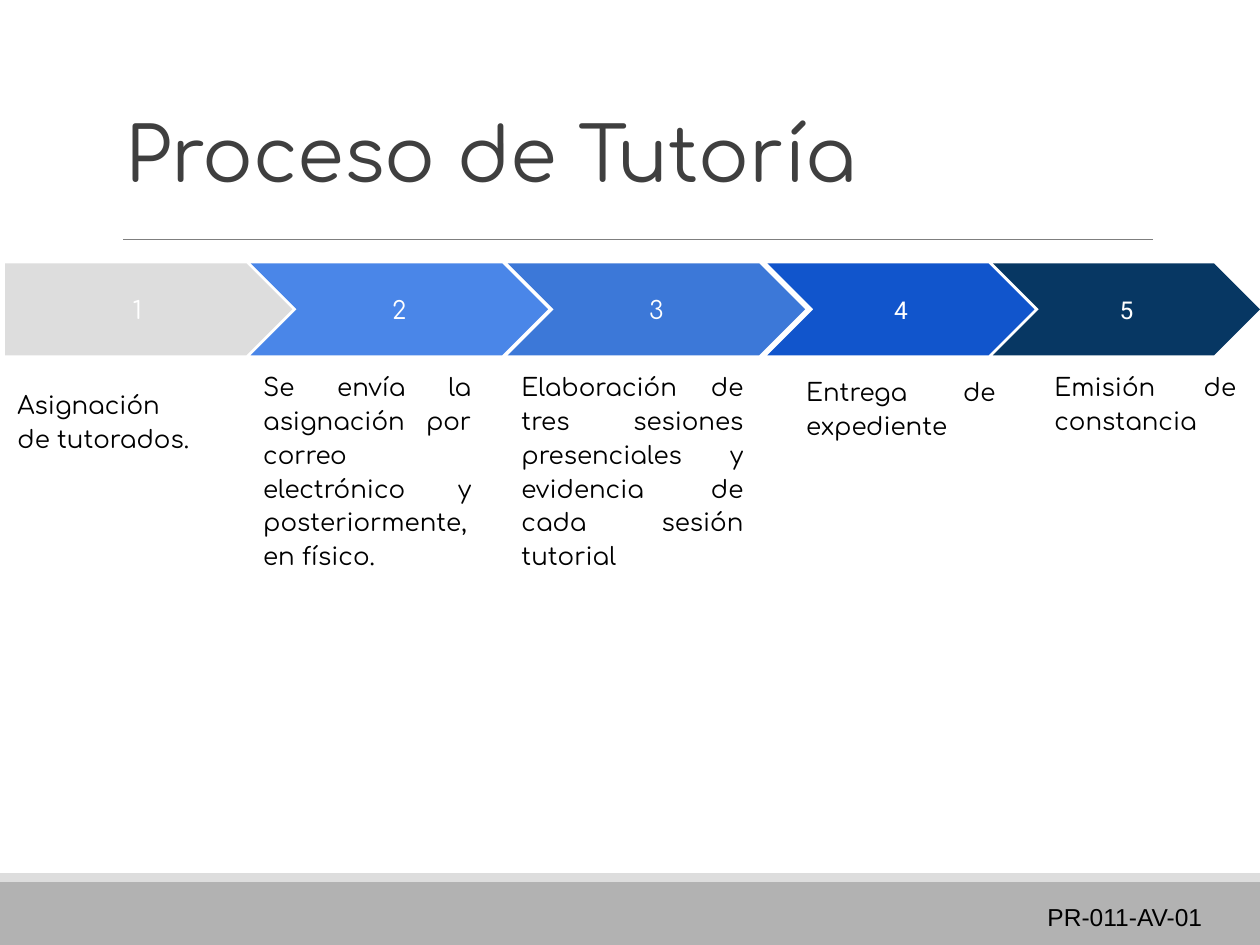
from dataclasses import dataclass

from lxml import etree
from pptx import Presentation
from pptx import util as u
from pptx.dml.color import RGBColor
from pptx.enum import shapes, text
from pptx.oxml.ns import qn


@dataclass(frozen=True)
class Theme:
    head: str = "Comfortaa"
    alt: str = "Roboto"
    plain: str = "Arial"
    title_size: int = 43
    body_size: int = 14
    title: str = "3F3F3F"
    ink: str = "000000"
    white: str = "FFFFFF"
    rule: str = "7F7F7F"
    footer: str = "B2B2B2"
    strip: str = "DDDDDD"


T = Theme()
TITLE = "Proceso de Tutoría"
CODE = "PR-011-AV-01"
ARROW_TOP, ARROW_H, TEXT_H = 2.09, 0.73, 2.86

# Each step: arrow (left, width, fill, number font), text (left, top, width, height, space before)
STEPS = [
    ("Asignación de tutorados.",
     (0.04, 2.28, "DDDDDD", T.head), (0.04, 2.96, 1.61, TEXT_H, 0)),
    ("Se envía la asignación por correo electrónico y posteriormente, en físico.",
     (1.99, 2.36, "4A86E8", T.head), (1.99, 2.82, 1.85, TEXT_H, 14)),
    ("Elaboración de tres sesiones presenciales y evidencia de cada sesión tutorial",
     (4.03, 2.36, "3C78D8", T.head), (4.04, 2.82, 1.96, TEXT_H, 14)),
    ("Entrega de expediente",
     (6.09, 2.12, "1155CC", T.alt), (6.3, 2.86, 1.7, 1.94, 14)),
    ("Emisión de constancia",
     (7.88, 2.12, "073763", T.alt), (8.27, 2.82, 1.64, TEXT_H, 14)),
]

prs = Presentation()
prs.slide_width, prs.slide_height = u.Inches(10), u.Inches(7.5)
s = prs.slides.add_slide(prs.slide_layouts[6])


def write(sp, words, font, size, color, align, anchor=text.MSO_ANCHOR.TOP,
          spacing=1.0, before=0, pad_y=0.1):
    tf = sp.text_frame
    tf.word_wrap = True
    tf.vertical_anchor = anchor
    tf.margin_left = tf.margin_right = u.Inches(0.1)
    tf.margin_top = tf.margin_bottom = u.Inches(pad_y)
    p = tf.paragraphs[0]
    p.alignment, p.line_spacing, p.space_before = align, spacing, u.Pt(before)
    r = p.add_run()
    r.text = words
    r.font.name, r.font.size = font, u.Pt(size)
    r.font.color.rgb = RGBColor.from_string(color)


def add_shape(kind, box, fill):
    sp = s.shapes.add_shape(kind, *map(u.Inches, box))
    sp.shadow.inherit = False
    sp.fill.solid()
    sp.fill.fore_color.rgb = RGBColor.from_string(fill)
    sp.line.fill.background()
    return sp


def add_text(box, *args, **kwargs):
    sp = s.shapes.add_textbox(*map(u.Inches, box))
    write(sp, *args, **kwargs)


# Footer bands
add_shape(shapes.MSO_SHAPE.RECTANGLE, (0, 7, 10, 0.5), T.footer)
add_shape(shapes.MSO_SHAPE.RECTANGLE, (0, 6.93, 10, 0.07), T.strip)

# Title and rule
rule = s.shapes.add_connector(shapes.MSO_CONNECTOR.STRAIGHT,
                              *map(u.Inches, (0.98, 1.9, 9.15, 1.9)))
rule.line.color.rgb = RGBColor.from_string(T.rule)
rule.line.width = u.Pt(0.75)
etree.SubElement(rule._element.spPr, qn("a:effectLst"))
add_text((0.9, 0.6, 8.25, 1.02), TITLE, T.head, T.title_size, T.title,
         text.PP_ALIGN.LEFT, text.MSO_ANCHOR.BOTTOM, spacing=0.85, pad_y=0.05)

# Document code
add_text((6.36, 7.06, 3.28, 0.44), CODE, T.plain, T.body_size, T.ink, text.PP_ALIGN.RIGHT)

# Numbered arrows with their descriptions
for n, (words, (left, width, fill, font), (*box, before)) in enumerate(STEPS, 1):
    kind = shapes.MSO_SHAPE.PENTAGON if n == 1 else shapes.MSO_SHAPE.CHEVRON
    sp = add_shape(kind, (left, ARROW_TOP, width, ARROW_H), fill)
    sp.adjustments[0] = 0.5
    write(sp, str(n), font, T.body_size, T.white,
          text.PP_ALIGN.CENTER, text.MSO_ANCHOR.MIDDLE)
    add_text(box, words, T.head, T.body_size, T.ink,
             text.PP_ALIGN.JUSTIFY, spacing=1.15, before=before)

prs.save("out.pptx")
